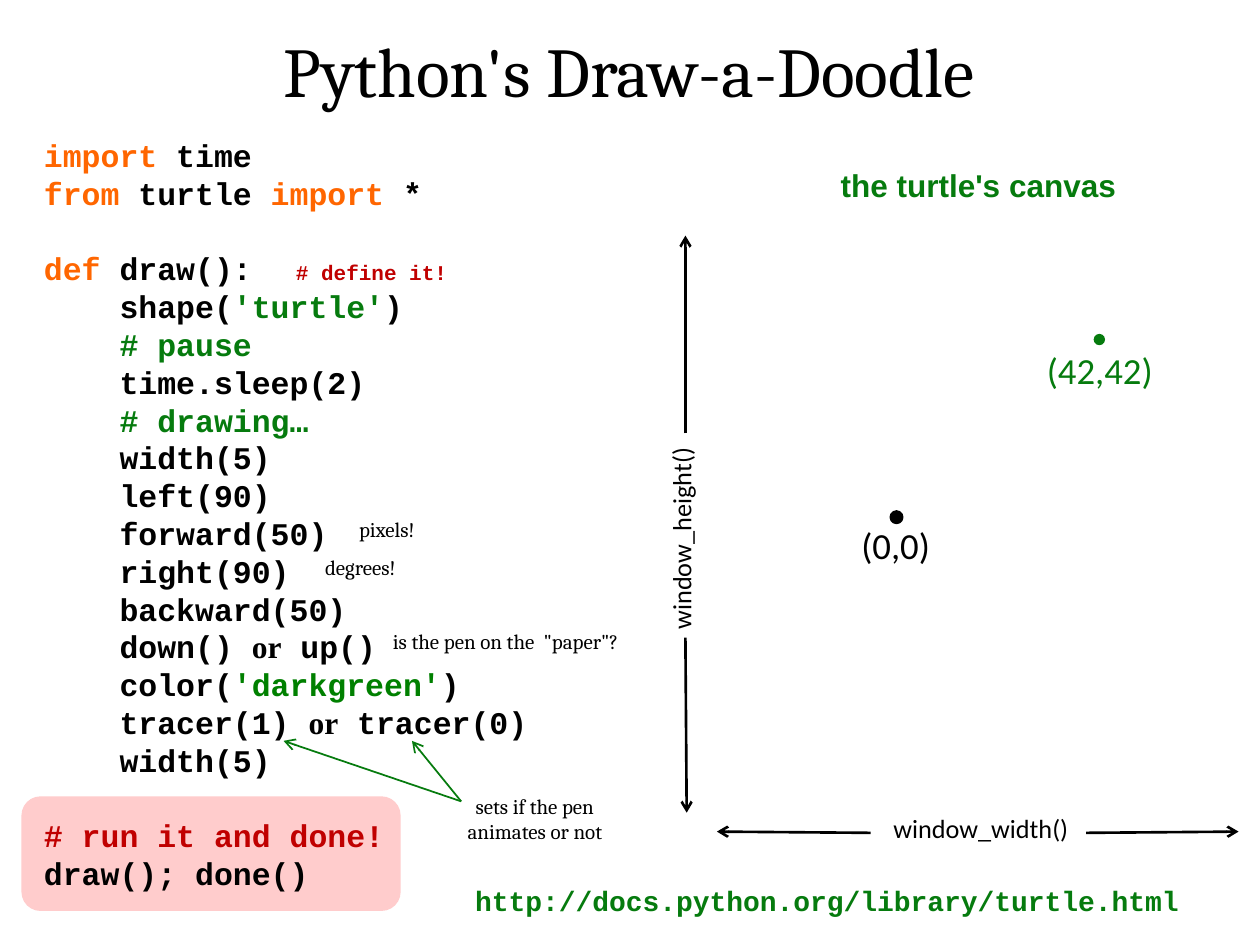
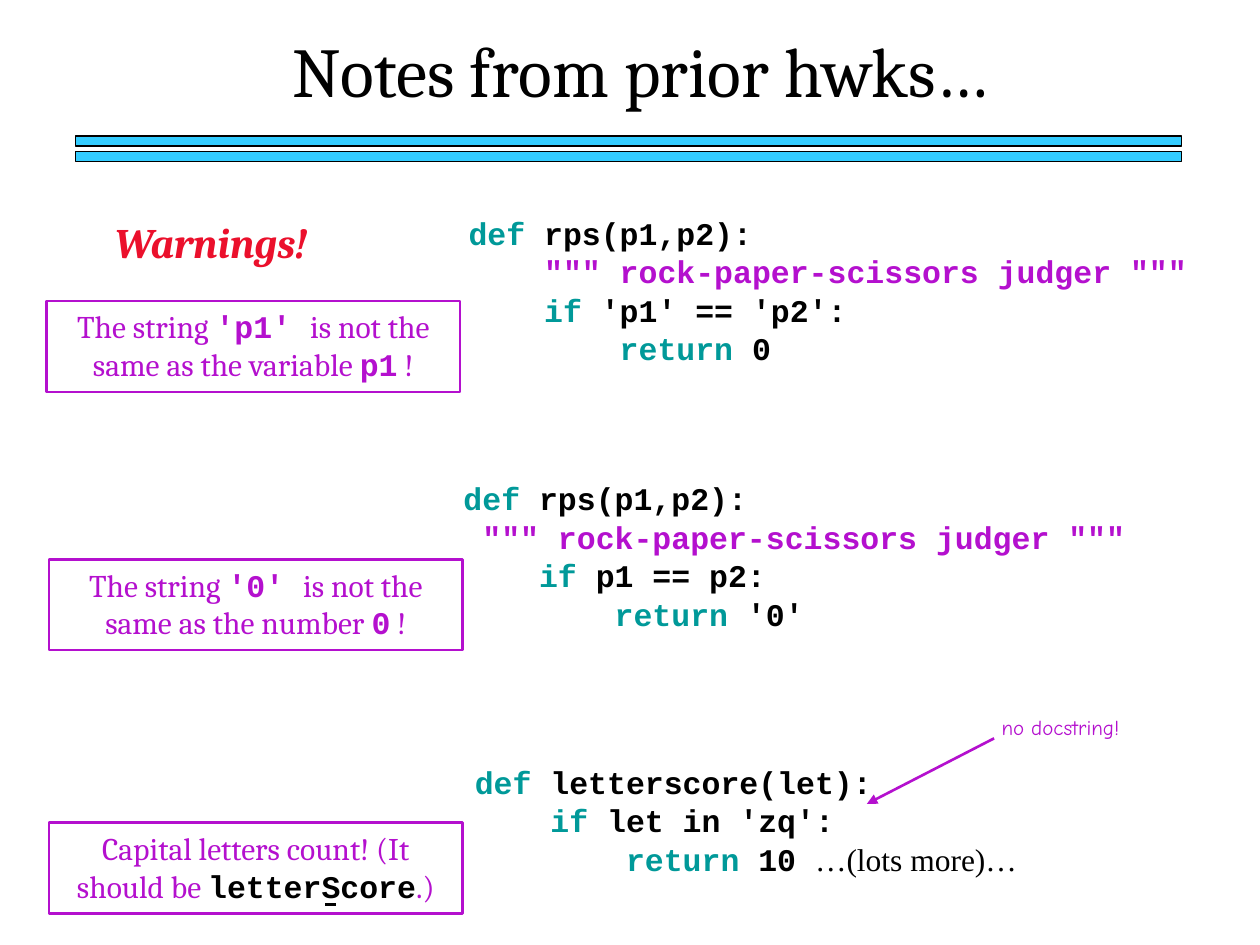
from dataclasses import dataclass

from lxml.etree import SubElement
from pptx import Presentation
from pptx.dml.color import RGBColor as RGB
from pptx.enum.shapes import MSO_CONNECTOR as LINK, MSO_SHAPE as SHAPE
from pptx.enum.text import MSO_ANCHOR as ANCHOR, MSO_AUTO_SIZE as FIT, PP_ALIGN as ALIGN
from pptx.oxml.ns import qn
from pptx.util import Inches, Pt

LEFT, MID, RIGHT = ALIGN.LEFT, ALIGN.CENTER, ALIGN.RIGHT


@dataclass(frozen=True)
class Theme:
    black: str = "000000"
    green: str = "067B0E"
    dark: str = "008000"
    orange: str = "FF6600"
    red: str = "C00000"
    alert: str = "EB102C"
    pink: str = "FFCCCC"
    teal: str = "009999"
    purple: str = "B410CE"
    cyan: str = "33CCFF"
    serif: str = "Cambria"
    sans: str = "Calibri"
    bold: str = "Arial"
    mono: str = "Courier New"
    roman: str = "Times New Roman"
    comic: str = "Comic Neue"
    title: int = 40
    head: int = 24
    point: int = 21
    body: int = 18
    link: int = 16
    axis: int = 15
    note: int = 12
    step: float = 0.6  # code indent, inches


T = Theme()


def mark(**look):
    """Return a function that pairs a text with its own look."""
    return lambda text: (text, look)


def style(font, face=None, size=None, color=None, bold=None, italic=None):
    if face:
        font.name = face
    if size:
        font.size = Pt(size)
    if color:
        font.color.rgb = RGB.from_string(color)
    if bold is not None:
        font.bold = bold
    if italic is not None:
        font.italic = italic


class Deck:
    def __init__(self, theme):
        self.theme = theme
        self.show = Presentation()
        self.show.slide_width, self.show.slide_height = Inches(10), Inches(7.5)

    def page(self, title, wide):
        """Start a slide under a centred title."""
        self.slide = self.show.slides.add_slide(self.show.slide_layouts[5])
        self.items = self.slide.shapes
        head = self.items.title
        head.left, head.top, head.width, head.height = map(Inches, (0.83, 0.17, wide, 0.77))
        self.fill_text(head, [title], MID, face=self.theme.serif,
                       size=self.theme.title, color=self.theme.black)

    def put(self, part, runs, align, **look):
        """Add runs to a paragraph; a run may carry its own look."""
        part.alignment = align
        style(part.font, **look)
        for item in runs:
            text, own = (item, {}) if isinstance(item, str) else item
            run = part.add_run()
            run.text = text
            style(run.font, **own)

    def fill_text(self, shape, runs, align, **look):
        frame = self.frame(shape)
        self.put(frame.paragraphs[0], runs, align, **look)

    def frame(self, shape):
        frame = shape.text_frame
        frame.word_wrap = True
        frame.auto_size = FIT.NONE
        frame.vertical_anchor = ANCHOR.TOP
        return frame

    def text(self, box, words, align=MID, turn=0, face=T.serif, size=T.note,
             color=T.black, **look):
        shape = self.items.add_textbox(*map(Inches, box))
        shape.rotation = turn
        self.fill_text(shape, [words], align, face=face, size=size, color=color, **look)

    def code(self, box, lines, pitch):
        """Lines are (indent, runs) or (indent, runs, gap before, tab stop)."""
        frame = self.frame(self.items.add_textbox(*map(Inches, box)))
        for i, (indent, runs, *more) in enumerate(lines):
            gap, stop = more or (0, 0)
            part = frame.add_paragraph() if i else frame.paragraphs[0]
            part.line_spacing = Pt(pitch)
            part.space_before = Pt(gap)
            props = part._p.get_or_add_pPr()
            props.set("marL", str(Inches(indent * self.theme.step)))
            props.set("indent", "0")
            if stop:
                tabs = SubElement(props, qn("a:tabLst"))
                SubElement(tabs, qn("a:tab"), pos=str(Inches(stop)), algn="l")
            self.put(part, runs, LEFT, face=self.theme.mono,
                     size=self.theme.body, color=self.theme.black, bold=True)

    def shape(self, kind, box, fill=None, line=None, weight=1.5):
        shape = self.items.add_shape(kind, *map(Inches, box))
        shape.shadow.inherit = False
        if fill:
            shape.fill.solid()
            shape.fill.fore_color.rgb = RGB.from_string(fill)
        else:
            shape.fill.background()
        if line:
            shape.line.color.rgb = RGB.from_string(line)
            shape.line.width = Pt(weight)
        else:
            shape.line.fill.background()
        return shape

    def note(self, top, left, runs):
        """Add a framed remark."""
        shape = self.shape(SHAPE.RECTANGLE, (left, top, 3.28, 0.72), line=self.theme.purple)
        self.fill_text(shape, runs, MID, face=self.theme.serif,
                       size=self.theme.body, color=self.theme.purple)

    def line(self, start, end, color=T.black, weight=1.5, tip=None):
        link = self.items.add_connector(LINK.STRAIGHT, *map(Inches, start + end))
        link.line.color.rgb = RGB.from_string(color)
        link.line.width = Pt(weight)
        props = link._element.spPr
        if tip:
            SubElement(props.find(qn("a:ln")), qn("a:tailEnd"), type=tip)
        SubElement(props, qn("a:effectLst"))

    def bands(self):
        for top in (1.08, 1.2):
            self.shape(SHAPE.RECTANGLE, (0.6, top, 8.78, 0.08),
                       self.theme.cyan, self.theme.black, 0.75)


def turtle(deck):
    deck.page("Python's Draw-a-Doodle", 8.33)
    deck.shape(SHAPE.ROUNDED_RECTANGLE, (0.17, 6.32, 3.01, 0.91), T.pink)
    word, green = mark(color=T.orange), mark(color=T.green)
    either = mark(face=T.roman)("or")
    pitch = 21.6
    deck.code((0.25, 1.03, 4.38, 6.16), [
        (0, [word("import"), " time"]),
        (0, [word("from"), " turtle ", word("import"), " *"]),
        (0, [word("def"), " draw():\t", mark(color=T.red, size=T.note)("# define it!")],
         pitch, 2.25),
        (1, ["shape(", green("'turtle'"), ")"]),
        (1, [green("# pause")]),
        (1, ["time.sleep(2)"]),
        (1, [green("# drawing…")]),
        (1, ["width(5)"]),
        (1, ["left(90)"]),
        (1, ["forward(50)"]),
        (1, ["right(90)"]),
        (1, ["backward(50)"]),
        (1, ["down() ", either, " up()"]),
        (1, ["color(", mark(color=T.dark)("'darkgreen'"), ")"]),
        (1, ["tracer(1) ", either, " tracer(0)"]),
        (1, ["width(5)"]),
        (0, [mark(color=T.red)("# run it and done!")], pitch, 0),
        (0, ["draw(); done()"]),
    ], pitch)

    deck.text((2.63, 4.05, 0.88, 0.3), "pixels!")
    deck.text((2.42, 4.35, 0.88, 0.3), "degrees!")
    deck.text((3.02, 4.94, 2.25, 0.3), "is the pen on the  \"paper\"?", LEFT)
    deck.text((3.57, 6.25, 1.35, 0.5), "sets if the pen animates or not")
    for left in (2.25, 3.27):
        deck.line((3.66, 6.36), (left, 5.88), T.green, 1, "arrow")
    deck.text((3.63, 6.96, 5.87, 0.37), "http://docs.python.org/library/turtle.html",
              face=T.mono, size=T.link, color=T.green, bold=True)

    deck.text((6.28, 1.27, 2.97, 0.4), "the turtle's canvas",
              face=T.bold, size=T.body, color=T.green, bold=True)
    deck.text((4.24, 4.1, 2.33, 0.35), "window_height()", turn=270, face=T.sans, size=T.axis)
    deck.text((6.62, 6.4, 2.33, 0.35), "window_width()", face=T.sans, size=T.axis)
    for start, end in (
        ((8.62, 6.61), (9.83, 6.6)),
        ((6.91, 6.61), (5.69, 6.6)),
        ((5.44, 3.44), (5.44, 1.87)),
        ((5.44, 5.06), (5.45, 6.45)),
    ):
        deck.line(start, end, tip="arrow")
    deck.text((6.4, 4.1, 1.08, 0.45), "(0,0)", RIGHT, face=T.sans, size=T.point)
    deck.text((8.21, 2.71, 1.1, 0.45), "(42,42)", LEFT, face=T.sans,
              size=T.point, color=T.green)
    deck.shape(SHAPE.OVAL, (7.07, 4.06, 0.09, 0.09), T.black, T.black)
    deck.shape(SHAPE.OVAL, (8.68, 2.65, 0.09, 0.09), T.green)


def warn(deck):
    deck.page("Notes from prior hwks…", 8.5)
    deck.bands()
    deck.text((0.75, 1.67, 1.85, 0.5), "Warnings!", size=T.head, color=T.alert,
              bold=True, italic=True)

    word = mark(color=T.teal)
    doc = mark(color=T.purple)('""" rock-paper-scissors judger """')
    pitch = 22
    for left, top, dent, test, value in (
        (3.62, 1.64, 1, "'p1' == 'p2'", "0"),
        (3.58, 3.75, 0.25, "p1 == p2", "'0'"),
    ):
        deck.code((left, top, 6.08, 1.28), [
            (0, [word("def"), " rps(p1,p2):"]),
            (dent, [doc]),
            (1, [word("if"), f" {test}:"]),
            (2, [word("return"), f" {value}"]),
        ], pitch)
    deck.code((3.67, 6, 5.95, 0.94), [
        (0, [word("def"), " letterscore(let):"]),
        (1, [word("if"), " let in 'zq':"]),
        (2, [word("return"), " 10 ", mark(face=T.roman, bold=False)("…(lots more)…")]),
    ], pitch)

    name = mark(face=T.mono, bold=True)
    for top, left, text, kind, bare in (
        (2.39, 0.37, "'p1' ", "variable", "p1"),
        (4.44, 0.39, "'0' ", "number", "0"),
    ):
        deck.note(top, left, ["The string ", name(text), f"is not the same as the {kind} ",
                              name(bare), " !"])
    deck.note(6.53, 0.39, ["Capital letters count! (It should be ",
                           mark(face=T.mono, bold=True, color=T.black)("letterScore"), ".)"])
    deck.line((2.58, 7.18), (2.67, 7.18))
    deck.text((7.85, 5.62, 1.62, 0.3), "no docstring!", LEFT, face=T.comic, color=T.purple)
    deck.line((7.89, 5.86), (6.88, 6.38), T.purple, tip="triangle")


def main():
    deck = Deck(T)
    turtle(deck)
    warn(deck)
    deck.show.save("out.pptx")


if __name__ == "__main__":
    main()
